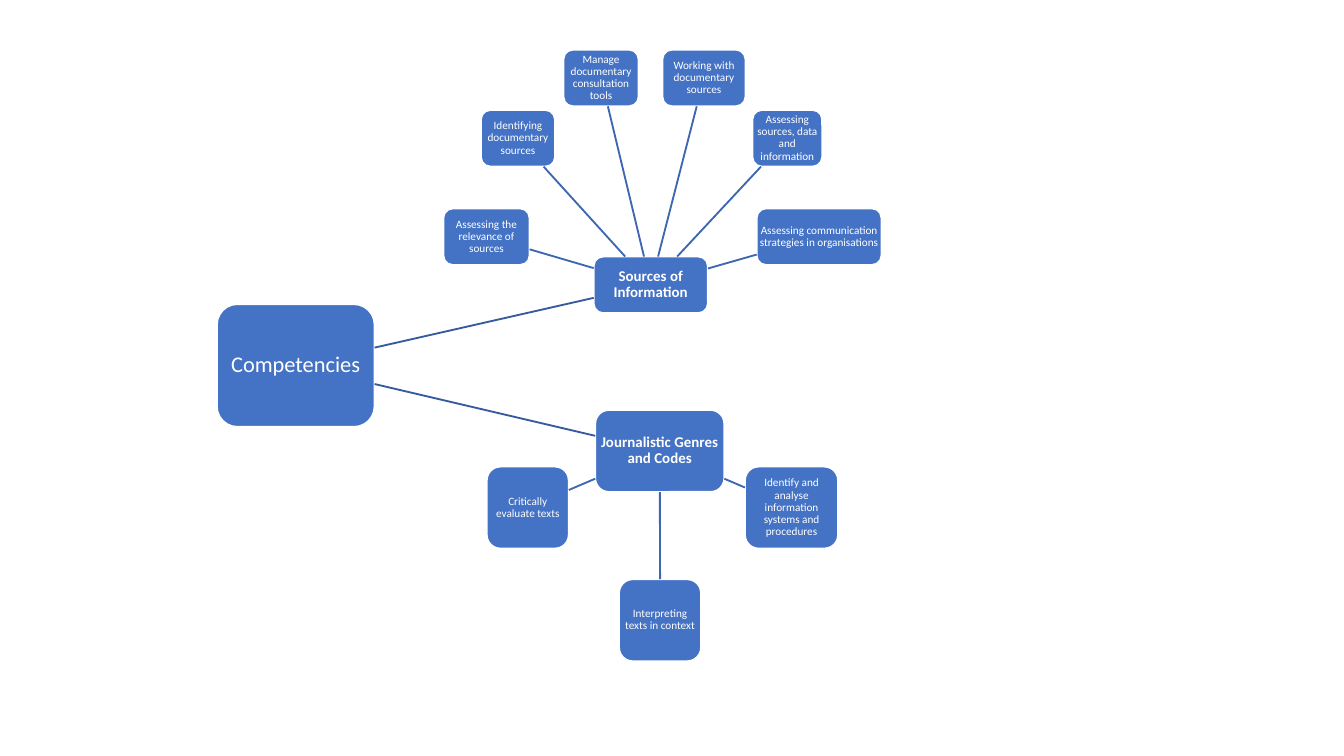
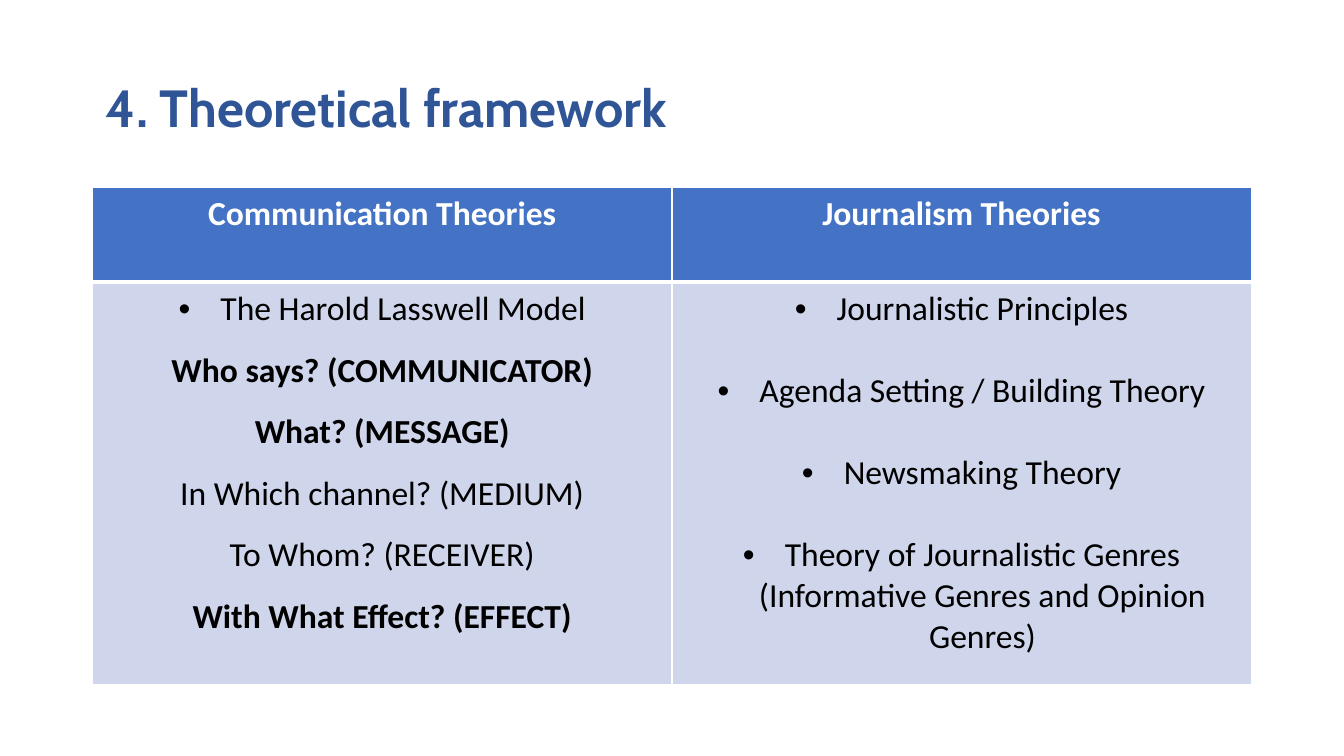
from pptx import Presentation
from pptx.dml.color import RGBColor
from pptx.enum.shapes import MSO_CONNECTOR, MSO_SHAPE
from pptx.enum.text import MSO_ANCHOR, PP_ALIGN
from pptx.oxml.ns import qn
from pptx.util import Cm, Pt
from lxml import etree

ROUNDED = MSO_SHAPE.ROUNDED_RECTANGLE
STRAIGHT = MSO_CONNECTOR.STRAIGHT
MIDDLE = MSO_ANCHOR.MIDDLE
CENTER, LEFT = PP_ALIGN.CENTER, PP_ALIGN.LEFT
TOP_SIDE, BOTTOM_SIDE = 0, 2

BLUE, DARK_BLUE, PALE_BLUE = "4472C4", "2F5597", "CFD5EA"
ROOT_LINE, LEAF_LINE = "365B9D", "3E67B2"
WHITE, BLACK = "FFFFFF", "000000"
BODY_FONT, TITLE_FONT = "Calibri", "Cabin"

# Each branch: text, box, and leaves of (text, left, top, width), in cm
ROOT = ("Competencies", (4.1, 5.75, 2.98, 2.32))
BRANCHES = [
    ("Sources of Information", (11.22, 4.85, 2.16, 1.07), [
        ("Assessing the relevance of sources", 8.38, 3.94, 1.63),
        ("Identifying documentary sources", 9.09, 2.08, 1.4),
        ("Manage documentary consultation tools", 10.65, 0.94, 1.42),
        ("Working with documentary sources", 12.52, 0.94, 1.57),
        ("Assessing sources, data and information", 14.22, 2.08, 1.32),
        ("Assessing communication strategies in organisations", 14.3, 3.94, 2.36),
    ]),
    ("Journalistic Genres and Codes", (11.25, 7.75, 2.44, 1.55), [
        ("Identify and analyse information systems and procedures", 14.08, 8.82, 1.76),
        ("Interpreting texts in context", 11.7, 10.95, 1.55),
        ("Critically evaluate texts", 9.2, 8.82, 1.55),
    ]),
]

BULLET = {"bullet": True}
QUESTION = {"line_spacing": 1.5}
KEY_QUESTION = {"line_spacing": 1.5, "bold": True}
SPACED_BULLET = {"bullet": True, "space_before": Pt(22)}
HEADERS = ["Communication Theories", "Journalism Theories"]
THEORIES = [
    [("The Harold Lasswell Model", BULLET),
     ("Who says? (COMMUNICATOR)", KEY_QUESTION),
     ("What? (MESSAGE)", KEY_QUESTION),
     ("In Which channel? (MEDIUM)", QUESTION),
     ("To Whom? (RECEIVER)", QUESTION),
     ("With What Effect? (EFFECT)", KEY_QUESTION)],
    [("Journalistic Principles", BULLET),
     ("Agenda Setting / Building Theory", SPACED_BULLET),
     ("Newsmaking Theory", SPACED_BULLET),
     ("Theory of Journalistic Genres (Informative Genres and Opinion Genres)",
      SPACED_BULLET)],
]


def rgb(color):
    return RGBColor.from_string(color)


def set_all(obj, values):
    for name, value in values.items():
        setattr(obj, name, value)


def edge_point(box, target):
    """Point where the line from the centre of box to that of target leaves box."""
    x, y = box.left + box.width / 2, box.top + box.height / 2
    dx = target.left + target.width / 2 - x
    dy = target.top + target.height / 2 - y
    t = 0.5 / max(abs(dx) / box.width, abs(dy) / box.height)
    return round(x + dx * t), round(y + dy * t)


class Deck:
    """Holds the shared style and the slide being filled."""

    def __init__(self):
        self.prs = Presentation()
        set_all(self.prs, {"slide_width": Cm(25.4), "slide_height": Cm(14.29)})
        self.s = None

    def new_slide(self):
        self.s = self.prs.slides.add_slide(self.prs.slide_layouts[6])

    def paragraph(self, p, text, size, color, bold=False, font=BODY_FONT,
                  bullet=False, **layout):
        if bullet:
            pPr = p._p.get_or_add_pPr()
            pPr.set("marL", str(Cm(0.79)))
            pPr.set("indent", str(-Cm(0.79)))
            etree.SubElement(pPr, qn("a:buFont"), typeface="Arial")
            etree.SubElement(pPr, qn("a:buChar"), char="•")
        set_all(p, {"alignment": CENTER, **layout})
        r = p.add_run()
        r.text = text
        set_all(r.font, {"name": font, "size": Pt(size), "bold": bold})
        r.font.color.rgb = rgb(color)

    def frame(self, tf, inset_x, inset_y):
        set_all(tf, {"word_wrap": True, "vertical_anchor": MIDDLE,
                     "margin_left": Cm(inset_x), "margin_right": Cm(inset_x),
                     "margin_top": Cm(inset_y), "margin_bottom": Cm(inset_y)})

    def title(self, text):
        tf = self.s.shapes.add_textbox(Cm(1.75), Cm(0.7), Cm(21.9), Cm(2.77)).text_frame
        self.frame(tf, 0.25, 0.13)
        self.paragraph(tf.paragraphs[0], text, 28, DARK_BLUE, True, TITLE_FONT,
                       alignment=LEFT, line_spacing=0.9)

    def node(self, text, box, size, bold=False):
        sp = self.s.shapes.add_shape(ROUNDED, *map(Cm, box))
        sp.shadow.inherit = False
        sp.fill.solid()
        sp.fill.fore_color.rgb = rgb(BLUE)
        sp.line.color.rgb = rgb(WHITE)
        sp.line.width = Pt(1)
        self.frame(sp.text_frame, 0.01, 0.01)
        self.paragraph(sp.text_frame.paragraphs[0], text, size, WHITE, bold,
                       line_spacing=0.9)
        return sp

    def link(self, parent, child, color):
        """Line between two nodes, joined to them when one is right below the other."""
        line = self.s.shapes.add_connector(
            STRAIGHT, *edge_point(parent, child), *edge_point(child, parent))
        line.line.color.rgb = rgb(color)
        line.line.width = Pt(1)
        etree.SubElement(line._element.spPr, qn("a:effectLst"))
        offset = parent.left + parent.width / 2 - child.left - child.width / 2
        if abs(offset) < Cm(0.02):
            line.begin_connect(parent, BOTTOM_SIDE)
            line.end_connect(child, TOP_SIDE)

    def cell(self, cell, fill, color, paragraphs, borders):
        tcPr = cell._tc.get_or_add_tcPr()
        for side, width in zip("LRTB", borders):
            ln = etree.SubElement(tcPr, qn(f"a:ln{side}"), w=str(Pt(width)))
            solid = etree.SubElement(ln, qn("a:solidFill"))
            etree.SubElement(solid, qn("a:srgbClr"), val=WHITE)
        cell.fill.solid()
        cell.fill.fore_color.rgb = rgb(fill)
        tf = cell.text_frame
        for i, (text, style) in enumerate(paragraphs):
            p = tf.add_paragraph() if i else tf.paragraphs[0]
            self.paragraph(p, text, 18, color, **style)

    def table(self, headers, columns):
        tbl = self.s.shapes.add_table(2, len(headers), Cm(1.75), Cm(3.53),
                                      Cm(21.9), Cm(9.42)).table
        tbl.rows[0].height, tbl.rows[1].height = Cm(1.8), Cm(7.62)
        for i, (header, body) in enumerate(zip(headers, columns)):
            self.cell(tbl.cell(0, i), BLUE, WHITE, [(header, {"bold": True})],
                      (1, 1, 1, 3))
            self.cell(tbl.cell(1, i), PALE_BLUE, BLACK, body, (1, 1, 3, 1))


def competencies_slide(deck):
    deck.new_slide()
    root = deck.node(*ROOT, 12)
    for text, box, leaves in BRANCHES:
        branch = deck.node(text, box, 8, bold=True)
        deck.link(root, branch, ROOT_LINE)
        for leaf_text, left, top, width in leaves:
            leaf = deck.node(leaf_text, (left, top, width, box[3]), 6)
            deck.link(branch, leaf, LEAF_LINE)


def theory_slide(deck):
    deck.new_slide()
    deck.title("4. Theoretical framework")
    deck.table(HEADERS, THEORIES)


def main():
    deck = Deck()
    competencies_slide(deck)
    theory_slide(deck)
    deck.prs.save("out.pptx")


if __name__ == "__main__":
    main()
